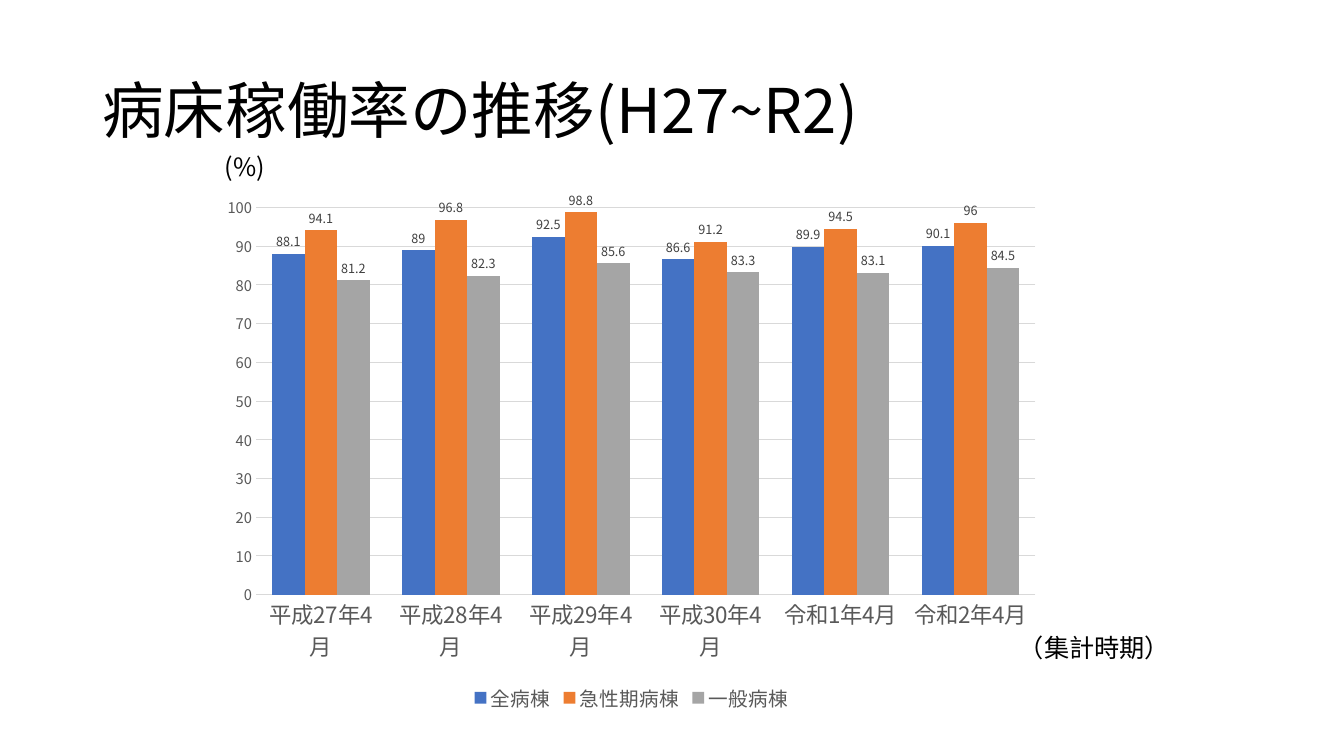
from dataclasses import dataclass

from lxml import etree
from pptx import Presentation
from pptx.chart.data import CategoryChartData
from pptx.dml.color import RGBColor
from pptx.enum.chart import XL_CHART_TYPE, XL_LABEL_POSITION, XL_LEGEND_POSITION, XL_TICK_MARK
from pptx.enum.text import MSO_ANCHOR
from pptx.oxml.ns import qn
from pptx.util import Cm, Pt

CLUSTERED = XL_CHART_TYPE.COLUMN_CLUSTERED
LABEL_OUTSIDE = XL_LABEL_POSITION.OUTSIDE_END
LEGEND_BOTTOM = XL_LEGEND_POSITION.BOTTOM
NO_TICK = XL_TICK_MARK.NONE
TOP, MIDDLE = MSO_ANCHOR.TOP, MSO_ANCHOR.MIDDLE

FONT = "Noto Sans CJK JP"
COLORS = {
    "text": "000000",
    "axis": "595959",
    "label": "404040",
    "grid": "D9D9D9",
    "all": "4472C4",
    "acute": "ED7D31",
    "general": "A5A5A5",
}


@dataclass
class Caption:
    text: str
    left: float
    top: float
    width: float
    height: float
    size: float
    anchor: MSO_ANCHOR = TOP
    wrap: bool = False
    line_spacing: float = 1.0


@dataclass
class Ward:
    name: str
    color: str
    rates: tuple[float, ...]


CAPTIONS = [
    Caption("病床稼働率の推移(H27~R2)", 2.33, 1.01, 29.21, 3.68, 44, MIDDLE, True, 0.9),
    Caption("(%)", 5.41, 3.68, 1.52, 1.03, 18),
    Caption("（集計時期）", 25.43, 15.8, 4.37, 1.03, 18),
]
PERIODS = [f"平成{year}年4月" for year in range(27, 31)] + [f"令和{year}年4月" for year in (1, 2)]
WARDS = [
    Ward("全病棟", "all", (88.1, 89, 92.5, 86.6, 89.9, 90.1)),
    Ward("急性期病棟", "acute", (94.1, 96.8, 98.8, 91.2, 94.5, 96)),
    Ward("一般病棟", "general", (81.2, 82.3, 85.6, 83.3, 83.1, 84.5)),
]


def rgb(color: str) -> RGBColor:
    return RGBColor.from_string(COLORS[color])


def style_font(font, size: float, color: str) -> None:
    font.name = FONT
    font.size = Pt(size)
    font.bold = False
    font.color.rgb = rgb(color)


def style_line(line) -> None:
    line.color.rgb = rgb("grid")
    line.width = Pt(0.75)


def add_east_asian_font(root) -> None:
    """Give Japanese characters the same typeface as the Latin ones."""
    for latin in list(root.iter(qn("a:latin"))):
        east_asian = etree.Element(qn("a:ea"))
        east_asian.set("typeface", FONT)
        latin.addnext(east_asian)


def add_caption(slide, caption: Caption) -> None:
    box = slide.shapes.add_textbox(
        Cm(caption.left), Cm(caption.top), Cm(caption.width), Cm(caption.height)
    )
    frame = box.text_frame
    frame.text = caption.text
    frame.word_wrap = caption.wrap
    frame.vertical_anchor = caption.anchor
    paragraph = frame.paragraphs[0]
    paragraph.line_spacing = caption.line_spacing
    style_font(paragraph.runs[0].font, caption.size, "text")
    add_east_asian_font(box.element)


def add_occupancy_chart(slide) -> None:
    data = CategoryChartData()
    data.categories = PERIODS
    for ward in WARDS:
        data.add_series(ward.name, ward.rates)
    chart = slide.shapes.add_chart(
        CLUSTERED, Cm(5.31), Cm(4.7), Cm(21.21), Cm(13.34), data
    ).chart
    style_font(chart.font, 10, "text")
    chart.has_title = False

    # Legend
    chart.has_legend = True
    chart.legend.position = LEGEND_BOTTOM
    chart.legend.include_in_layout = False
    style_font(chart.legend.font, 14, "axis")

    # Axes
    period_axis, rate_axis = chart.category_axis, chart.value_axis
    for axis, size in ((period_axis, 16), (rate_axis, 10.5)):
        axis.major_tick_mark = NO_TICK
        axis.minor_tick_mark = NO_TICK
        style_font(axis.tick_labels.font, size, "axis")
    style_line(period_axis.format.line)
    rate_axis.format.line.fill.background()
    rate_axis.minimum_scale = 0
    rate_axis.maximum_scale = 100
    rate_axis.major_unit = 10
    style_line(rate_axis.major_gridlines.format.line)

    # Bars and their values
    plot = chart.plots[0]
    plot.gap_width = 100
    plot.overlap = 0
    plot.vary_by_categories = False
    for ward, bars in zip(WARDS, plot.series):
        bars.format.fill.solid()
        bars.format.fill.fore_color.rgb = rgb(ward.color)
        labels = bars.data_labels
        labels.show_value = True
        labels.position = LABEL_OUTSIDE
        style_font(labels.font, 9, "label")
    add_east_asian_font(chart.element)


def main() -> None:
    presentation = Presentation()
    presentation.slide_width = Cm(33.87)
    presentation.slide_height = Cm(19.05)
    slide = presentation.slides.add_slide(presentation.slide_layouts[6])

    add_occupancy_chart(slide)
    for caption in CAPTIONS:
        add_caption(slide, caption)

    presentation.save("out.pptx")


if __name__ == "__main__":
    main()
